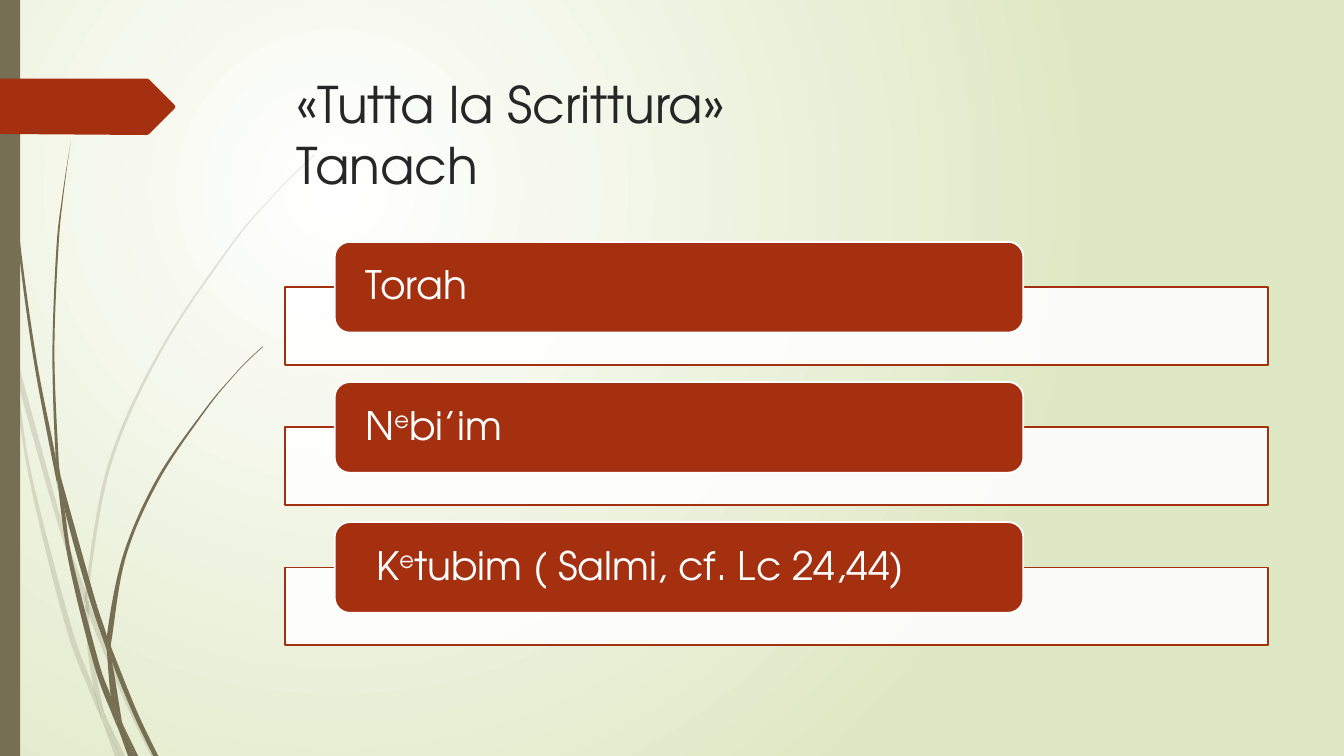
from dataclasses import dataclass

from lxml.etree import SubElement
from pptx import Presentation
from pptx.dml.color import RGBColor
from pptx.enum.shapes import MSO_SHAPE
from pptx.enum.text import MSO_ANCHOR, PP_ALIGN
from pptx.oxml.ns import qn
from pptx.util import Inches, Pt

FONT = "TeX Gyre Adventor"
RUST, OLIVE, WHITE, DARK = "A53010", "766F54", "FFFFFF", "262626"
ROW_TOP, ROW_PITCH = 2.4, 1.39
UNITS = 1000  # outline units per inch

Point = tuple[float, float]


@dataclass
class Blade:
    """A piece of grass between two edges, both listed from the tip down."""
    left: list[Point]
    right: list[Point]


PALE_GRASS = [
    Blade([(0, 2.99), (0.1, 3.44), (0.11, 3.5)], [(0, 2.82), (0.09, 3.22), (0.11, 3.5)]),
    Blade([(0.14, 3.45), (0.17, 3.76), (0.58, 5.22), (0.84, 5.99)],
          [(0.14, 3.45), (0.62, 5.2), (0.85, 5.86)]),
    Blade([(0.88, 5.96), (0.88, 6.1), (1.23, 6.94), (1.5, 7.5)],
          [(0.88, 5.96), (0.92, 6.07), (1.27, 6.92), (1.55, 7.5)]),
    Blade([(1.05, 7.11), (1.19, 7.5)], [(1.05, 7.11), (1.24, 7.5)]),
    Blade([(0.11, 3.5), (0.28, 4.7), (0.65, 6.21), (0.92, 6.93), (1.01, 7.14)],
          [(0.11, 3.5), (0.17, 3.76), (0.31, 4.69), (0.7, 6.19), (0.93, 6.83), (1.01, 7.14)]),
    Blade([(0.84, 5.99), (0.87, 6.46), (0.93, 6.83), (0.96, 6.92), (1.05, 7.11)],
          [(0.84, 5.99), (0.88, 6.1), (0.91, 6.46), (1.03, 7.06), (1.05, 7.11)]),
    Blade([(3.12, 1.53), (2.89, 1.75), (2.68, 1.97), (2.28, 2.44), (1.58, 3.48),
           (1.07, 4.61), (0.85, 5.84), (0.88, 5.96)],
          [(3.12, 1.54), (2.9, 1.75), (2.68, 1.98), (2.29, 2.45), (1.6, 3.49),
           (1.1, 4.62), (0.88, 5.84), (0.88, 5.96)]),
    Blade([(1.01, 7.14), (1.14, 7.5)], [(1.01, 7.14), (1.19, 7.5)]),
    Blade([(0.85, 5.86), (0.84, 5.99), (0.88, 6.1)], [(0.85, 5.86), (0.88, 5.96), (0.88, 6.1)]),
    Blade([(0.93, 6.83), (0.99, 7.07), (1.01, 7.14), (1.19, 7.5)],
          [(0.93, 6.83), (0.96, 6.92), (1.05, 7.11), (1.19, 7.5)]),
]
DARK_GRASS = [
    Blade([(0.03, 0), (0.04, 0.48), (0.07, 1.1), (0.17, 2.33), (0.33, 3.55),
           (0.56, 4.77), (0.57, 4.81)],
          [(0.04, 0), (0.05, 0.48), (0.08, 1.09), (0.19, 2.32), (0.36, 3.55),
           (0.55, 4.53), (0.57, 4.81)]),
    Blade([(0.6, 4.72), (0.64, 5.05), (0.88, 5.92), (1.06, 6.45)],
          [(0.6, 4.72), (0.93, 5.9), (1.06, 6.31), (1.06, 6.45)]),
    Blade([(1.1, 6.41), (1.11, 6.56), (1.32, 7.08), (1.52, 7.5)],
          [(1.1, 6.41), (1.13, 6.49), (1.36, 7.06), (1.57, 7.5)]),
    Blade([(0.57, 4.77), (0.68, 5.57), (0.93, 6.59), (1.11, 7.08), (1.17, 7.22)],
          [(0.57, 4.77), (0.64, 5.05), (0.72, 5.56), (0.98, 6.57), (1.1, 6.91), (1.17, 7.22)]),
    Blade([(0.7, 1.41), (0.62, 1.93), (0.56, 2.45), (0.52, 3.49), (0.55, 4.49), (0.6, 4.72)],
          [(0.7, 1.41), (0.63, 1.93), (0.58, 2.45), (0.54, 3.49), (0.58, 4.53), (0.6, 4.72)]),
    Blade([(1.22, 7.19), (1.33, 7.5)], [(1.22, 7.19), (1.37, 7.5)]),
    Blade([(0.55, 4.49), (0.57, 4.77), (0.64, 5.05)], [(0.55, 4.49), (0.6, 4.72), (0.64, 5.05)]),
    Blade([(2.6, 3.44), (2.45, 3.58), (2.31, 3.73), (2.04, 4.05), (1.56, 4.74),
           (1.22, 5.51), (1.06, 6.31), (1.1, 6.41)],
          [(2.61, 3.44), (2.45, 3.59), (2.31, 3.74), (2.05, 4.06), (1.58, 4.76),
           (1.25, 5.52), (1.11, 6.33), (1.1, 6.41)]),
    Blade([(1.17, 7.22), (1.27, 7.5)], [(1.17, 7.22), (1.31, 7.5)]),
    Blade([(1.06, 6.45), (1.1, 6.91), (1.16, 7.06), (1.22, 7.19)],
          [(1.06, 6.45), (1.11, 6.56), (1.21, 7.16), (1.22, 7.19)]),
    Blade([(1.06, 6.31), (1.06, 6.45), (1.11, 6.56)], [(1.06, 6.31), (1.1, 6.41), (1.11, 6.56)]),
    Blade([(1.1, 6.91), (1.16, 7.17), (1.17, 7.22), (1.3, 7.5)],
          [(1.1, 6.91), (1.16, 7.06), (1.22, 7.19), (1.33, 7.5)]),
]
TAG = [(0, 0.78), (1.46, 0.78), (1.48, 0.79), (1.73, 1.04), (1.74, 1.06),
       (1.73, 1.08), (1.48, 1.33), (1.46, 1.34), (0, 1.33)]
# A part between two carets is raised.
BOOKS = ["Torah", "N^e^bi’im", " K^e^tubim ( Salmi, cf. Lc 24,44)"]


def rgb(color: str) -> RGBColor:
    return RGBColor.from_string(color)


def paint(sp, fill: str, line: str | None = None, alpha: int = 100) -> None:
    sp.shadow.inherit = False
    sp.fill.solid()
    sp.fill.fore_color.rgb = rgb(fill)
    if alpha < 100:
        color = sp.element.spPr.find(f"{qn('a:solidFill')}/{qn('a:srgbClr')}")
        SubElement(color, qn("a:alpha"), val=str(alpha * 1000))
    if line:
        sp.line.color.rgb = rgb(line)
        sp.line.width = Pt(1.25)
    else:
        sp.line.fill.background()


def add_box(s, kind: MSO_SHAPE, x: float, y: float, w: float, h: float,
            fill: str, **look):
    sp = s.shapes.add_shape(kind, Inches(x), Inches(y), Inches(w), Inches(h))
    paint(sp, fill, **look)
    return sp


def add_outline(s, points: list[Point], fill: str, alpha: int = 100):
    grid = [(round(x * UNITS), round(y * UNITS)) for x, y in points]
    builder = s.shapes.build_freeform(*grid[0], scale=Inches(1) / UNITS)
    builder.add_line_segments(grid[1:])
    sp = builder.convert_to_shape()
    paint(sp, fill, alpha=alpha)
    return sp


def bend(edge: list[Point]) -> list[list[Point]]:
    """Give the three Bezier points of each step of a Catmull-Rom curve."""
    padded = [edge[0], *edge, edge[-1]]
    return [[(b[0] + (c[0] - a[0]) / 6, b[1] + (c[1] - a[1]) / 6),
             (c[0] - (d[0] - b[0]) / 6, c[1] - (d[1] - b[1]) / 6), c]
            for a, b, c, d in zip(padded, padded[1:], padded[2:], padded[3:])]


def add_blade(s, blade: Blade, alpha: int) -> None:
    back = blade.right[::-1]
    points = blade.left + back
    sp = add_outline(s, points, OLIVE, alpha)
    x0, y0 = (min(values) for values in zip(*points))
    outline = sp.element.find(f".//{qn('a:path')}")
    for child in list(outline):
        outline.remove(child)
    steps = [("a:moveTo", [points[0]]),
             *(("a:cubicBezTo", step) for step in bend(blade.left)),
             ("a:lnTo", [back[0]]),
             *(("a:cubicBezTo", step) for step in bend(back)),
             ("a:close", [])]
    for tag, targets in steps:
        command = SubElement(outline, qn(tag))
        for x, y in targets:
            SubElement(command, qn("a:pt"), x=str(round((x - x0) * UNITS)),
                       y=str(round((y - y0) * UNITS)))


def write(sp, text: str, *, size: float, color: str, inset: float = 0.1,
          anchor: MSO_ANCHOR = MSO_ANCHOR.TOP, spacing: float = 1.0) -> None:
    tf = sp.text_frame
    tf.word_wrap = True
    tf.vertical_anchor = anchor
    tf.margin_left = tf.margin_right = Inches(inset)
    p = tf.paragraphs[0]
    p.alignment = PP_ALIGN.LEFT
    p.line_spacing = spacing
    for n, line in enumerate(text.split("\n")):
        if n:
            p.add_line_break()
        for i, part in enumerate(line.split("^")):
            r = p.add_run()
            r.text = part
            r.font.name, r.font.size = FONT, Pt(size)
            r.font.color.rgb = rgb(color)
            if i % 2:
                r.font._element.set("baseline", "30000")


def set_background(s) -> None:
    fill = s.background.fill
    fill.gradient()
    for stop, color, position in zip(fill.gradient_stops, (WHITE, "DFE8C4"), (0, 1)):
        stop.color.rgb = rgb(color)
        stop.position = position
    grad = s.element.find(f".//{qn('a:gradFill')}")
    grad.remove(grad.find(qn("a:lin")))
    glow = SubElement(grad, qn("a:path"), path="circle")
    SubElement(glow, qn("a:fillToRect"), l="50000", t="50000", r="100000", b="100000")


def add_book(s, row: int, name: str) -> None:
    y = ROW_TOP + row * ROW_PITCH
    add_box(s, MSO_SHAPE.RECTANGLE, 2.83, y + 0.45, 9.75, 0.77, WHITE, line=RUST, alpha=90)
    label = add_box(s, MSO_SHAPE.ROUNDED_RECTANGLE, 3.32, y, 6.83, 0.9, RUST, line=WHITE)
    write(label, name, size=28, color=WHITE, inset=0.26,
          anchor=MSO_ANCHOR.MIDDLE, spacing=0.9)


def main() -> None:
    prs = Presentation()
    prs.slide_width, prs.slide_height = Inches(13.33), Inches(7.5)
    s = prs.slides.add_slide(prs.slide_layouts[6])
    set_background(s)
    for grass, alpha in ((PALE_GRASS, 20), (DARK_GRASS, 100)):
        for blade in grass:
            add_blade(s, blade, alpha)
    add_box(s, MSO_SHAPE.RECTANGLE, 0, 0, 0.2, 7.5, OLIVE)
    add_outline(s, TAG, RUST)
    title = s.shapes.add_textbox(Inches(2.84), Inches(0.68), Inches(9.75), Inches(1.4))
    write(title, "«Tutta la Scrittura»\nTanach", size=36, color=DARK)
    for row, name in enumerate(BOOKS):
        add_book(s, row, name)
    prs.save("out.pptx")


if __name__ == "__main__":
    main()
